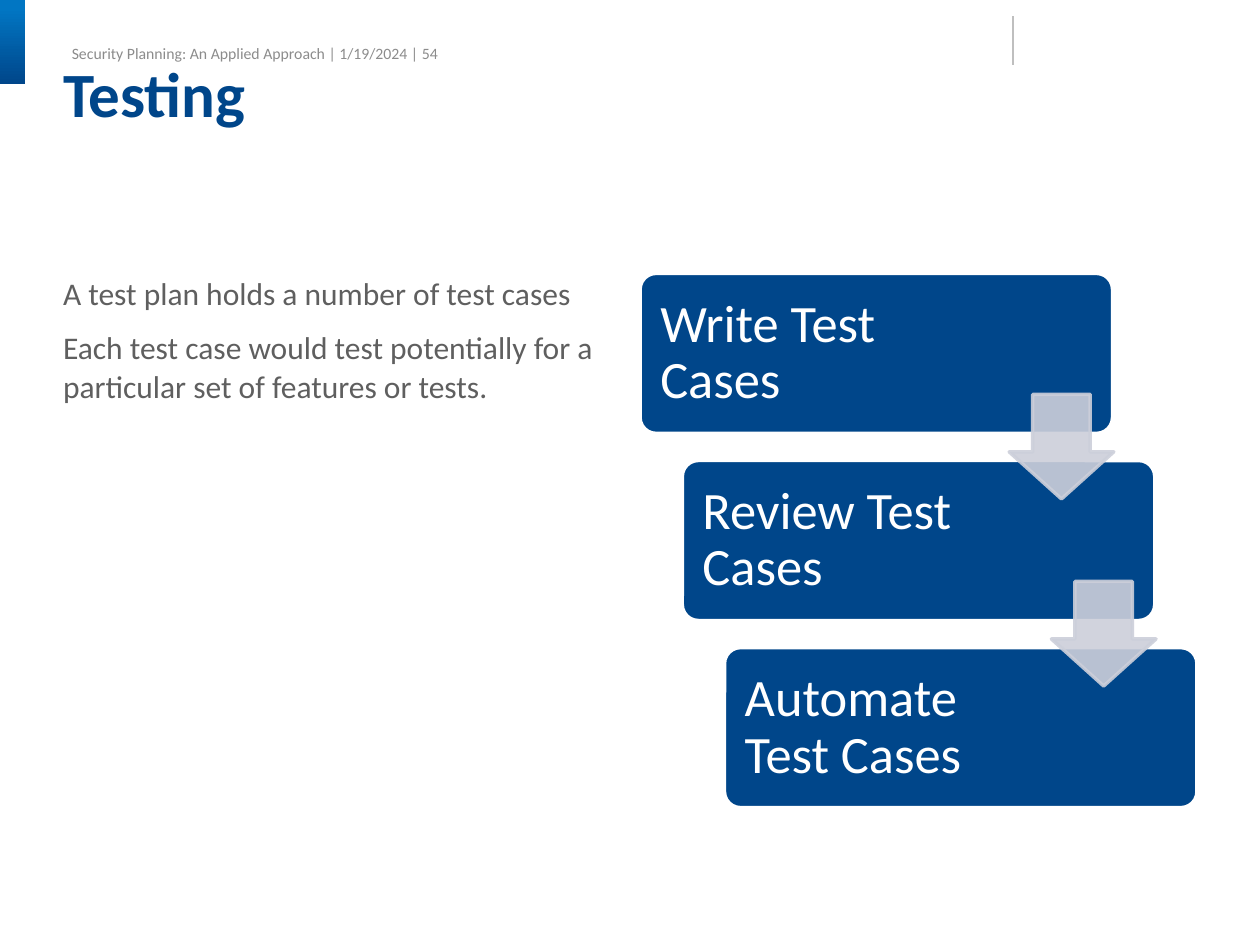
from lxml import etree
from pptx import Presentation
from pptx.dml.color import RGBColor
from pptx.enum.shapes import MSO_CONNECTOR, MSO_SHAPE
from pptx.enum.text import MSO_ANCHOR, MSO_AUTO_SIZE, PP_ALIGN
from pptx.oxml.ns import qn
from pptx.util import Inches, Pt

ROUND, ARROW = MSO_SHAPE.ROUNDED_RECTANGLE, MSO_SHAPE.DOWN_ARROW
STRAIGHT = MSO_CONNECTOR.STRAIGHT
TOP, MIDDLE = MSO_ANCHOR.TOP, MSO_ANCHOR.MIDDLE
LEFT = PP_ALIGN.LEFT
NO_FIT = MSO_AUTO_SIZE.NONE

W, H = 10, 7.5
MARGIN = 0.05 * W
CONTENT_TOP = 2.17
CARD_W, CARD_H = 3.75, 1.27
CARD_LEFT, STEP_X, STEP_Y = 5.08, 0.335, 1.485
CARD_PAD = 0.04
ARROW_SIZE = 0.83
NAVY, PALE = "00468A", "CCCFDA"

STEPS = [("Write Test Cases", 2.38),
         ("Review Test Cases", 2.52),
         ("Automate Test Cases", 2.52)]
POINTS = ["A test plan holds a number of test cases",
          "Each test case would test potentially for a particular set of features or tests."]


def rgb(value):
    return RGBColor.from_string(value)


def box(*lengths):
    return [Inches(v) for v in lengths]


def place(sp, *lengths):
    sp.left, sp.top, sp.width, sp.height = box(*lengths)


def frame(sp, anchor, insets=(0, 0, 0, 0), wrap=True):
    tf = sp.text_frame
    tf.auto_size = NO_FIT
    tf.word_wrap = wrap
    tf.vertical_anchor = anchor
    tf.margin_left, tf.margin_top, tf.margin_right, tf.margin_bottom = box(*insets)
    return tf


def write(p, text, size, color, bold=False, spacing=None):
    p.alignment = LEFT
    p.space_before = Pt(0)
    if spacing:
        p.line_spacing = spacing
    r = p.add_run()
    r.text = text
    r.font.name = "Calibri"
    r.font.size = Pt(size)
    r.font.bold = bold
    r.font.color.rgb = rgb(color)


def add_shape(slide, kind, lengths, adjustments, color, line=None):
    sp = slide.shapes.add_shape(kind, *box(*lengths))
    sp.shadow.inherit = False
    for i, value in enumerate(adjustments):
        sp.adjustments[i] = value
    sp.fill.solid()
    sp.fill.fore_color.rgb = rgb(color)
    if line:
        sp.line.color.rgb = rgb(line)
        sp.line.width = Pt(2)
    else:
        sp.line.fill.background()
    return sp


def add_header(slide):
    tb = slide.shapes.add_textbox(*box(0.57, 0.23, 2.84, 0.23))
    tf = frame(tb, MIDDLE, (0, 0.2, 0, 0.04), wrap=False)
    write(tf.paragraphs[0], "Security Planning: An Applied Approach | 1/19/2024 | 54", 9, "8C8C8C")

    sp = add_shape(slide, ROUND, (0, 0, 0.02 * W, 0.67), [0], NAVY)
    sp.fill.gradient()
    sp.fill.gradient_angle = 270
    for stop, position, color in zip(sp.fill.gradient_stops, (0.1, 1), ("0176C3", NAVY)):
        stop.position = position
        stop.color.rgb = rgb(color)

    line = slide.shapes.add_connector(STRAIGHT, *box(8.04, 0.13, 8.04, 0.52))
    line.line.color.rgb = rgb("BFBFBF")
    line.line.width = Pt(0.75)
    etree.SubElement(line._element.spPr, qn("a:effectLst"))


def add_title(slide, text):
    sp = slide.shapes.title
    place(sp, MARGIN, 0.5, 0.9 * W, 0.2 * H)
    write(frame(sp, TOP).paragraphs[0], text, 36, NAVY, bold=True, spacing=0.9)


def add_body(slide, points):
    sp = slide.placeholders[1]
    place(sp, MARGIN, CONTENT_TOP, 4.42, 4.25)
    tf = frame(sp, TOP)
    for i, text in enumerate(points):
        p = tf.add_paragraph() if i else tf.paragraphs[0]
        pPr = p._p.get_or_add_pPr()
        pPr.set("marL", "0")
        pPr.set("indent", "0")
        etree.SubElement(pPr, qn("a:buNone"))
        write(p, text, 18, "5F5F5F", spacing=Pt(22))
        if i:
            p.space_before = Pt(9)


def add_card(slide, i, text, text_w):
    x, y = CARD_LEFT + i * STEP_X, CONTENT_TOP + i * STEP_Y
    add_shape(slide, ROUND, (x, y, CARD_W, CARD_H), [0.1], NAVY, "FFFFFF")
    tb = slide.shapes.add_textbox(*box(x + CARD_PAD, y + CARD_PAD, text_w, CARD_H - 2 * CARD_PAD))
    tf = frame(tb, MIDDLE, [0.12] * 4)
    write(tf.paragraphs[0], text, 30, "FFFFFF", spacing=0.9)


def add_arrow(slide, i):
    x, y = 8.01 + i * STEP_X, 3.13 + i * STEP_Y
    sp = add_shape(slide, ARROW, (x, y, ARROW_SIZE, ARROW_SIZE), [0.55, 0.45], PALE, PALE)
    for color in sp._element.spPr.iter(qn("a:srgbClr")):
        etree.SubElement(color, qn("a:alpha")).set("val", "90000")


def main():
    prs = Presentation()
    prs.slide_width, prs.slide_height = box(W, H)
    slide = prs.slides.add_slide(prs.slide_layouts[1])
    add_header(slide)
    add_title(slide, "Testing")
    add_body(slide, POINTS)
    for i, (text, text_w) in enumerate(STEPS):
        add_card(slide, i, text, text_w)
    for i in range(len(STEPS) - 1):
        add_arrow(slide, i)
    prs.save("out.pptx")


if __name__ == "__main__":
    main()
